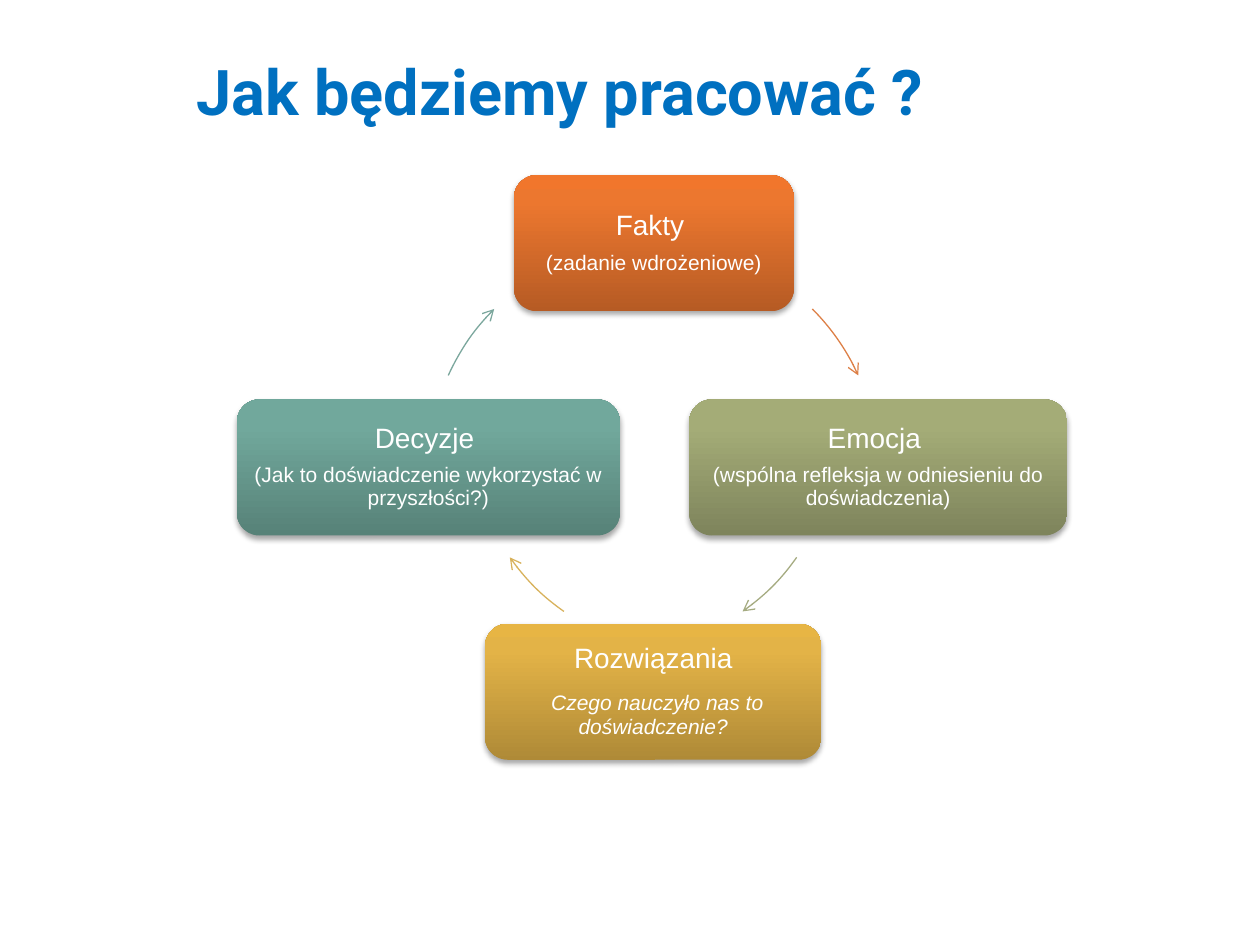
from copy import deepcopy
from dataclasses import dataclass

from lxml import etree
from pptx import Presentation
from pptx.dml.color import RGBColor
from pptx.enum import shapes, text
from pptx.oxml.ns import qn
from pptx.util import Inches, Pt

BOX_HEIGHT = 1.08
CIRCLE_SIZE = 3.57


@dataclass
class Step:
    heading: str
    detail: str
    left: float
    top: float
    width: float
    stops: tuple[str, str, str]
    italic: bool = False
    lead: str = ""


@dataclass
class Arrow:
    left: float
    top: float
    start: float
    end: float
    color: str


STEPS = [
    Step("Fakty ", "(zadanie wdrożeniowe)", 4.08, 1.39, 2.22,
         ("B65B24", "EC772F", "F1762C")),
    Step("Emocja ", "(wspólna refleksja w odniesieniu do doświadczenia)",
         5.47, 3.17, 3, ("7E845C", "A4AC77", "A6AE76")),
    Step("Rozwiązania", "Czego nauczyło nas to doświadczenie?",
         3.85, 4.95, 2.67, ("AF8A37", "E3B347", "E7B544"), True, " "),
    Step("Decyzje ", "(Jak to doświadczenie wykorzystać w przyszłości?)",
         1.88, 3.17, 3.04, ("578278", "71A89C", "70AA9D")),
]

ARROWS = [
    Arrow(3.4, 1.93, 315, 335.7, "DD8047"),
    Arrow(3.08, 1.61, 35.2, 54.8, "A5AB81"),
    Arrow(3.72, 1.61, 125.2, 144.8, "D8B25C"),
    Arrow(3.4, 1.93, 204.3, 225, "7BA79D"),
]


def rgb(value: str) -> RGBColor:
    return RGBColor.from_string(value)


def fill_gradient(s, colors: tuple[str, str, str]) -> None:
    s.fill.gradient()
    s.fill.gradient_angle = 90
    stops = next(s._element.iter(qn("a:gsLst")))
    stops.append(deepcopy(stops[-1]))
    for stop, position, color in zip(s.fill.gradient_stops, (0, 0.8, 1), colors):
        stop.position = position
        stop.color.rgb = rgb(color)


def add_shadow(s) -> None:
    s.shadow.inherit = False
    effects = s._element.spPr.find(qn("a:effectLst"))
    shadow = etree.SubElement(
        effects, qn("a:outerShdw"), blurRad=str(Pt(3.1)), dist=str(Pt(1.8)),
        dir="5400000", rotWithShape="0")
    color = etree.SubElement(shadow, qn("a:srgbClr"), val="000000")
    etree.SubElement(color, qn("a:alpha"), val="35000")


def format_paragraph(p, size: float, italic: bool = False) -> None:
    p.alignment = text.PP_ALIGN.CENTER
    p.line_spacing = 0.9
    after = etree.SubElement(p._p.get_or_add_pPr(), qn("a:spcAft"))
    etree.SubElement(after, qn("a:spcPct"), val="35000")
    p.font.name = "Arial"
    p.font.size = Pt(size)
    p.font.italic = italic
    p.font.color.rgb = rgb("FFFFFF")


def add_step(slide, step: Step) -> None:
    s = slide.shapes.add_shape(
        shapes.MSO_SHAPE.ROUNDED_RECTANGLE, Inches(step.left), Inches(step.top),
        Inches(step.width), Inches(BOX_HEIGHT))
    fill_gradient(s, step.stops)
    s.line.fill.background()
    add_shadow(s)
    tf = s.text_frame
    tf.word_wrap = True
    tf.vertical_anchor = text.MSO_ANCHOR.MIDDLE
    tf.margin_left = tf.margin_right = Inches(0.07)
    tf.margin_top = tf.margin_bottom = Inches(0.07)
    p = tf.paragraphs[0]
    format_paragraph(p, 16)
    p.add_run().text = step.heading
    p = tf.add_paragraph()
    format_paragraph(p, 12, step.italic)
    if step.lead:
        r = p.add_run()
        r.text = step.lead
        r.font.size = Pt(17)
        r.font.italic = False
    p.add_run().text = step.detail


def add_arrow(slide, arrow: Arrow) -> None:
    s = slide.shapes.add_shape(
        shapes.MSO_SHAPE.ARC, Inches(arrow.left), Inches(arrow.top),
        Inches(CIRCLE_SIZE), Inches(CIRCLE_SIZE))
    s.adjustments[0] = arrow.start * 0.6
    s.adjustments[1] = arrow.end * 0.6
    s.fill.background()
    s.shadow.inherit = False
    s.line.color.rgb = rgb(arrow.color)
    s.line.width = Pt(0.75)
    etree.SubElement(s.line._get_or_add_ln(), qn("a:tailEnd"), type="arrow")


def add_title(slide, title: str) -> None:
    s = slide.shapes.title
    s.left, s.top = Inches(1.14), Inches(0.36)
    s.width, s.height = Inches(6.61), Inches(0.71)
    tf = s.text_frame
    tf.text = title
    p = tf.paragraphs[0]
    p.alignment = text.PP_ALIGN.CENTER
    p.font.name = "Roboto"
    p.font.size = Pt(36)
    p.font.bold = True
    p.font.color.rgb = rgb("0070C0")


def main() -> None:
    prs = Presentation()
    prs.slide_width, prs.slide_height = Inches(10), Inches(7.5)
    slide = prs.slides.add_slide(prs.slide_layouts[5])
    add_title(slide, "Jak będziemy pracować ?")
    for step, arrow in zip(STEPS, ARROWS):
        add_step(slide, step)
        add_arrow(slide, arrow)
    prs.save("out.pptx")


if __name__ == "__main__":
    main()
